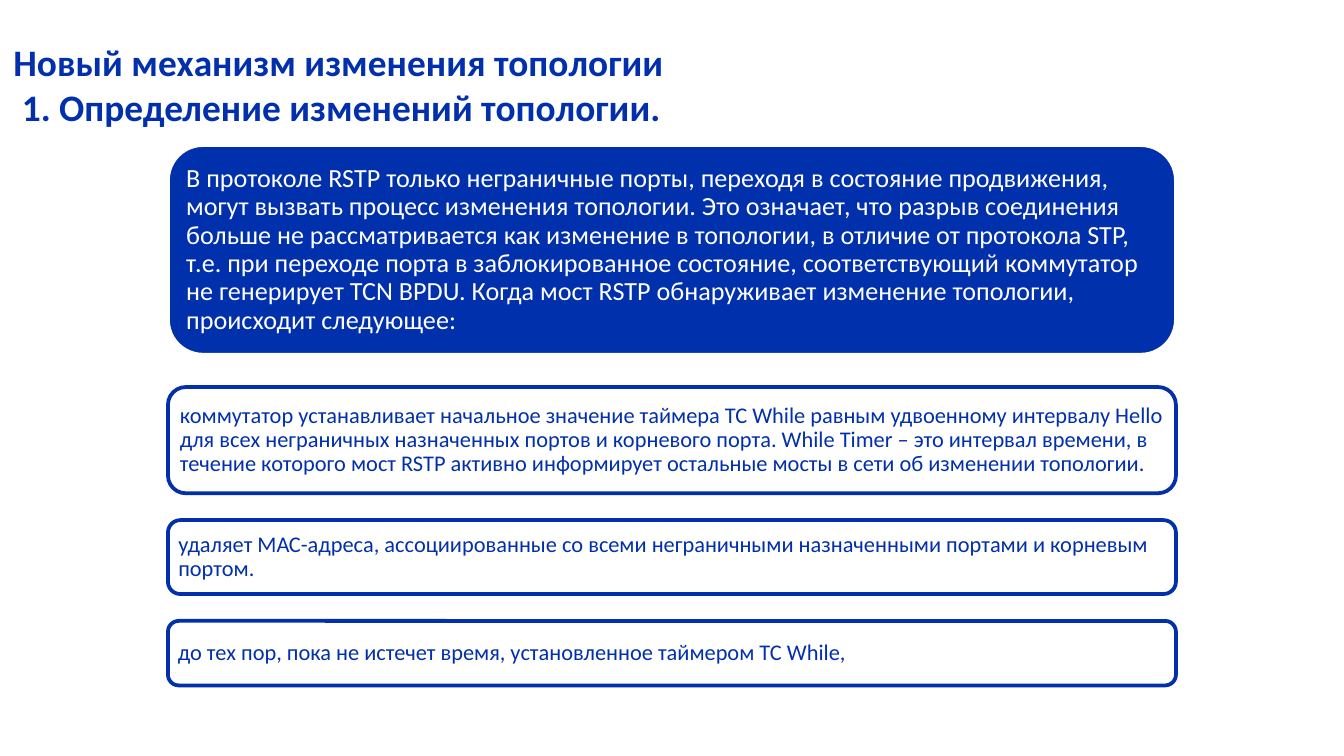
from pptx import Presentation
from pptx.dml.color import RGBColor
from pptx.enum.shapes import MSO_SHAPE
from pptx.enum.text import MSO_ANCHOR, MSO_AUTO_SIZE, PP_ALIGN
from pptx.util import Inches, Pt

BLUE = "0230AC"
DEEP_BLUE = "0030AC"
WHITE = "FFFFFF"
STEP_GAP = 0.2

TITLE = "Новый механизм изменения топологии\v 1. Определение изменений топологии."
INTRO = (
    "В протоколе RSTP только неграничные порты, переходя в состояние продвижения, "
    "могут вызвать процесс изменения топологии. Это означает, что разрыв соединения "
    "больше не рассматривается как изменение в топологии, в отличие от протокола STP, "
    "т.е. при переходе порта в заблокированное состояние, соответствующий коммутатор "
    "не генерирует TCN BPDU. Когда мост RSTP обнаруживает изменение топологии, "
    "происходит следующее:"
)
STEPS = [
    (0.79, "коммутатор устанавливает начальное значение таймера TC While равным "
           "удвоенному интервалу Hello для всех неграничных назначенных портов и "
           "корневого порта. While Timer – это интервал времени, в течение которого "
           "мост RSTP активно информирует остальные мосты в сети об изменении топологии."),
    (0.55, "удаляет МАС-адреса, ассоциированные со всеми неграничными назначенными "
           "портами и корневым портом."),
    (0.48, "до тех пор, пока не истечет время, установленное таймером TC While,"),
]


def color(value):
    """Turn a hex string into a colour."""
    return RGBColor.from_string(value)


def format_text(text_frame, size, text_color, margins, line_spacing, bold=False):
    """Format a left-aligned, vertically centred text frame."""
    side, end = map(Inches, margins)
    text_frame.word_wrap = True
    text_frame.auto_size = MSO_AUTO_SIZE.NONE
    text_frame.vertical_anchor = MSO_ANCHOR.MIDDLE
    text_frame.margin_left = text_frame.margin_right = side
    text_frame.margin_top = text_frame.margin_bottom = end
    for paragraph in text_frame.paragraphs:
        paragraph.alignment = PP_ALIGN.LEFT
        paragraph.line_spacing = line_spacing
        for run in paragraph.runs:
            run.font.name = "Calibri"
            run.font.size = Pt(size)
            run.font.bold = bold
            run.font.color.rgb = color(text_color)


def add_title(slide, left, top, width, height):
    """Place the slide title in its placeholder."""
    title = slide.shapes.title
    title.left, title.top = Inches(left), Inches(top)
    title.width, title.height = Inches(width), Inches(height)
    title.text_frame.text = TITLE
    format_text(title.text_frame, 20, BLUE, (0.1, 0.05), 1.0, bold=True)


def add_card(slide, box, text, fill, line, text_color, size, inset):
    """Add one rounded card with its text."""
    card = slide.shapes.add_shape(MSO_SHAPE.ROUNDED_RECTANGLE, *map(Inches, box))
    card.shadow.inherit = False
    card.adjustments[0] = 0.167
    card.fill.solid()
    card.fill.fore_color.rgb = color(fill)
    card.line.color.rgb = color(line)
    card.line.width = Pt(2)
    card.text_frame.text = text
    format_text(card.text_frame, size, text_color, (inset, inset), 0.9)


def add_steps(slide, left, top, width):
    """Stack the outlined step cards with equal gaps."""
    for height, text in STEPS:
        add_card(slide, (left, top, width, height), text, WHITE, BLUE, BLUE, 12, 0.05)
        top += height + STEP_GAP


def main():
    """Build the slide and save it."""
    presentation = Presentation()
    presentation.slide_width = Inches(10)
    presentation.slide_height = Inches(10 * 9 / 16)
    slide = presentation.slides.add_slide(presentation.slide_layouts[5])
    add_title(slide, 0, 0.12, 10.23, 1.01)
    add_card(slide, (1.25, 1.08, 7.5, 1.56), INTRO, DEEP_BLUE, WHITE, WHITE, 14, 0.06)
    add_steps(slide, 1.25, 2.88, 7.5)
    presentation.save("out.pptx")


if __name__ == "__main__":
    main()
